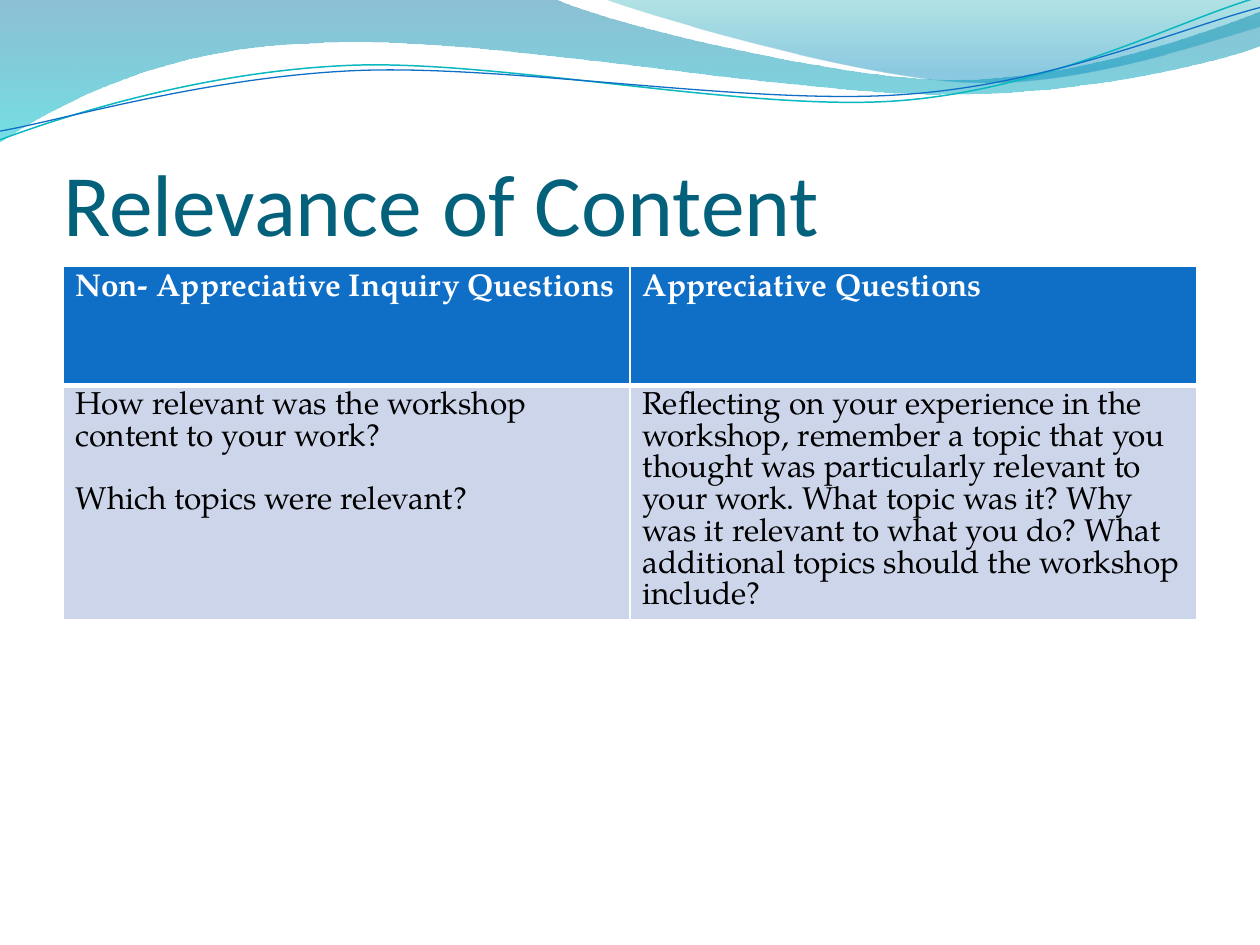
from lxml import etree
from pptx import Presentation
from pptx.dml.color import RGBColor
from pptx.enum.text import MSO_ANCHOR, MSO_AUTO_SIZE, PP_ALIGN
from pptx.oxml.ns import qn
from pptx.util import Pt

LEFT = PP_ALIGN.LEFT
BOTTOM = MSO_ANCHOR.BOTTOM
NO_AUTOFIT = MSO_AUTO_SIZE.NONE
TITLE_ONLY = 5
LINE_PITCH = 18.1
ROW_HEIGHT = 68
COLORS = {
    "title": "04617B", "header": "0F6FC6", "body": "CCD5EA",
    "white": "FFFFFF", "black": "000000",
    "teal_line": "0AB8BF", "blue_line": "0F6FC6",
    "wave_top": "0074A1", "wave_bottom": "00C6CF",
    "crest_top": "00A1A9", "crest_bottom": "008BBF",
}

WAVE = [(0, 0), (316.8, -0.7),
        (342.7, 12.2, 478.1, 45.4, 545.8, 45.4),
        (614.2, 45.4, 689.8, 18.7, 720, 6.5), (720.7, 25.9),
        (707.8, 31.7, 626.4, 54.7, 537.1, 54),
        (447.8, 54, 275, 20.2, 185, 24.5),
        (92.9, 25.9, 33.1, 59.8, -0.7, 81.4), (0, 0)]
CREST = [(344.9, -0.7),
         (366.5, 7.9, 491, 44.6, 553.7, 46.8),
         (616.3, 49.7, 691.9, 23, 720, 15.1), (720, 0), (344.9, -0.7)]
TEAL_LINE = [(0, 79.9),
             (34.6, 67, 113.8, 41, 199.4, 37.4),
             (284.4, 33.8, 427, 64.1, 513.4, 57.6),
             (599.8, 51.1, 675.4, 10.8, 718.6, -1.4)]
BLUE_LINE = [(0, 74.9),
             (33.8, 69.1, 118.1, 43.9, 203.8, 40.3),
             (290.2, 36.7, 429.8, 60.5, 516.2, 54),
             (601.9, 48.2, 677.5, 15.1, 720, 4.3)]

QUESTIONS = [
    [["Non- Appreciative Inquiry Questions"], ["Appreciative Questions"]],
    [["How relevant was the workshop content to your work?",
      "Which topics were relevant?"],
     ["Reflecting on your experience in the workshop, remember a topic that "
      "you thought was particularly relevant to your work. What topic was it? "
      "Why was it relevant to what you do? What additional topics should the "
      "workshop include?"]],
]


def color(name):
    """Return the named colour."""
    return RGBColor.from_string(COLORS[name])


def add_outline(slide, segments, close):
    """Add a shadowless freeform whose six-number segments are cubic curves."""
    start, *rest = [(Pt(segment[i]), Pt(segment[i + 1]))
                    for segment in segments for i in range(0, len(segment), 2)]
    builder = slide.shapes.build_freeform(*start)
    builder.add_line_segments(rest, close=close)
    outline = builder.convert_to_shape()
    outline.shadow.inherit = False
    steps = iter(list(outline.element.spPr.iter(qn("a:lnTo"))))
    for segment in segments[1:]:
        step = next(steps)
        if len(segment) == 6:
            step.tag = qn("a:cubicBezTo")
            for _ in range(2):
                follower = next(steps)
                step.append(follower[0])
                follower.getparent().remove(follower)
    return outline


def add_wave(slide, segments, stops):
    """Add a wave with a translucent gradient running downward."""
    wave = add_outline(slide, segments, True)
    wave.line.fill.background()
    wave.fill.gradient()
    wave.fill.gradient_angle = 270
    for stop, (position, name, _) in zip(wave.fill.gradient_stops, stops):
        stop.position = position
        stop.color.rgb = color(name)
    tints = wave.element.spPr.iter(qn("a:srgbClr"))
    for tint, (_, _, opacity) in zip(tints, stops):
        etree.SubElement(tint, qn("a:alpha"), val=str(opacity * 1000))


def add_swoosh(slide, segments, name, width):
    """Add an open curved line."""
    swoosh = add_outline(slide, segments, False)
    swoosh.fill.background()
    swoosh.line.color.rgb = color(name)
    swoosh.line.width = Pt(width)


def set_title(slide, text):
    """Fill and place the title placeholder."""
    title = slide.shapes.title
    title.left, title.top, title.width, title.height = (
        Pt(36), Pt(55), Pt(648), Pt(90))
    frame = title.text_frame
    frame.text = text
    frame.auto_size = NO_AUTOFIT
    frame.vertical_anchor = BOTTOM
    frame.margin_left = frame.margin_right = frame.margin_bottom = 0
    frame.margin_top = Pt(3.6)
    heading = frame.paragraphs[0]
    heading.alignment = LEFT
    heading.font.name = "Calibri"
    heading.font.size = Pt(50)
    heading.font.color.rgb = color("title")


def set_borders(cell, widths):
    """Give the cell white borders of the given widths."""
    properties = cell._tc.get_or_add_tcPr()
    for side, width in widths.items():
        border = etree.SubElement(properties, qn("a:ln" + side), w=str(Pt(width)))
        fill = etree.SubElement(border, qn("a:solidFill"))
        etree.SubElement(fill, qn("a:srgbClr"), val=COLORS["white"])


def fill_cell(cell, texts, is_header):
    """Write and format one cell of the question table."""
    set_borders(cell, {"L": 1, "R": 1, "T": 1 if is_header else 3,
                       "B": 3 if is_header else 1})
    cell.fill.solid()
    cell.fill.fore_color.rgb = color("header" if is_header else "body")
    cell.text = "\n".join(texts)
    for index, paragraph in enumerate(cell.text_frame.paragraphs):
        paragraph.line_spacing = Pt(LINE_PITCH)
        paragraph.space_before = Pt(LINE_PITCH if index else 0)
        paragraph.font.name = "TeX Gyre Pagella"
        paragraph.font.size = Pt(18)
        paragraph.font.bold = is_header
        paragraph.font.color.rgb = color("white" if is_header else "black")


def add_questions(slide):
    """Add the table that compares the two kinds of question."""
    holder = slide.shapes.add_table(
        2, 2, Pt(36), Pt(152.25), Pt(648), Pt(2 * ROW_HEIGHT))
    for row, contents in zip(holder.table.rows, QUESTIONS):
        for cell, texts in zip(row.cells, contents):
            fill_cell(cell, texts, contents is QUESTIONS[0])
    holder.height = Pt(226)


def main():
    """Build and save the slide."""
    deck = Presentation()
    deck.slide_width, deck.slide_height = Pt(720), Pt(540)
    slide = deck.slides.add_slide(deck.slide_layouts[TITLE_ONLY])
    add_wave(slide, WAVE, [(0, "wave_top", 45), (1, "wave_bottom", 55)])
    add_wave(slide, CREST, [(0, "crest_top", 30), (0.8, "crest_bottom", 45)])
    add_swoosh(slide, TEAL_LINE, "teal_line", 0.85)
    add_swoosh(slide, BLUE_LINE, "blue_line", 0.75)
    set_title(slide, "Relevance of Content")
    add_questions(slide)
    deck.save("out.pptx")


if __name__ == "__main__":
    main()
